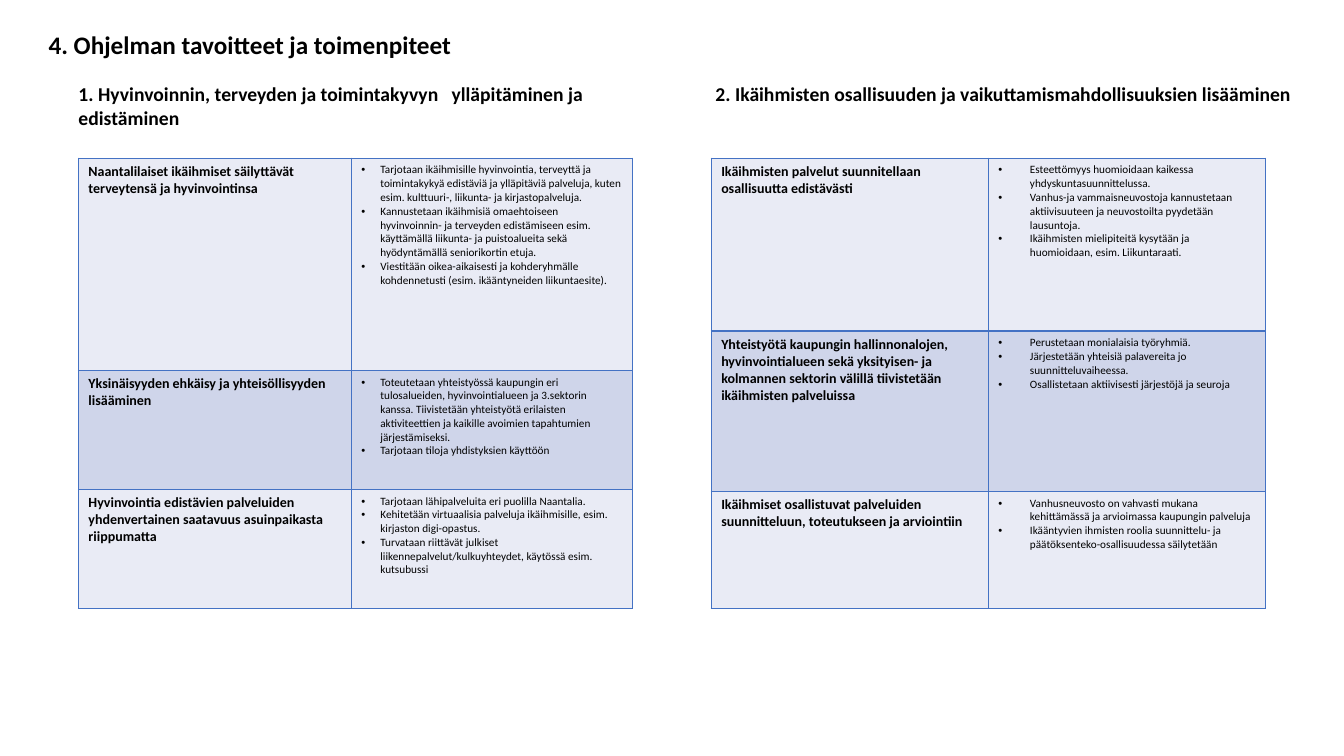
"""Builds a slide with two tables of goals and measures for older residents."""
from lxml import etree
from pptx import Presentation
from pptx.dml.color import RGBColor
from pptx.enum import text
from pptx.oxml import ns
from pptx.util import Pt

TITLE = "4. Ohjelman tavoitteet ja toimenpiteet"
SECTIONS = [
    {
        "heading": "1. Hyvinvoinnin, terveyden ja toimintakyvyn   ylläpitäminen ja edistäminen",
        "heading_left": 49, "heading_width": 446,
        "left": 56, "columns": (195, 201), "rows": (151.5, 85, 85),
        "indent": 13.5, "last_space": 0,
        "goals": [
            ("Naantalilaiset ikäihmiset säilyttävät terveytensä ja hyvinvointinsa", [
                "Tarjotaan ikäihmisille hyvinvointia, terveyttä ja toimintakykyä edistäviä ja "
                "ylläpitäviä palveluja, kuten esim. kulttuuri-, liikunta- ja kirjastopalveluja.",
                "Kannustetaan ikäihmisiä omaehtoiseen hyvinvoinnin- ja terveyden edistämiseen esim. "
                "käyttämällä liikunta- ja puistoalueita sekä hyödyntämällä seniorikortin etuja.",
                "Viestitään oikea-aikaisesti ja kohderyhmälle kohdennetusti "
                "(esim. ikääntyneiden liikuntaesite).",
            ]),
            ("Yksinäisyyden ehkäisy ja yhteisöllisyyden lisääminen", [
                "Toteutetaan yhteistyössä kaupungin eri tulosalueiden, hyvinvointialueen ja "
                "3.sektorin kanssa. Tiivistetään yhteistyötä erilaisten aktiviteettien ja kaikille "
                "avoimien tapahtumien järjestämiseksi.",
                "Tarjotaan tiloja yhdistyksien käyttöön",
            ]),
            ("Hyvinvointia edistävien palveluiden yhdenvertainen saatavuus asuinpaikasta riippumatta", [
                "Tarjotaan lähipalveluita eri puolilla Naantalia.",
                "Kehitetään virtuaalisia palveluja ikäihmisille, esim. kirjaston digi-opastus.",
                "Turvataan riittävät julkiset liikennepalvelut/kulkuyhteydet, käytössä esim. kutsubussi",
            ]),
        ],
    },
    {
        "heading": "2. Ikäihmisten osallisuuden ja vaikuttamismahdollisuuksien lisääminen",
        "heading_left": 504, "heading_width": 438,
        "left": 508, "columns": (198, 198), "rows": (123.5, 114.5, 83.5),
        "indent": 22.5, "last_space": 8,
        "goals": [
            ("Ikäihmisten palvelut suunnitellaan osallisuutta edistävästi", [
                "Esteettömyys huomioidaan kaikessa yhdyskuntasuunnittelussa.",
                "Vanhus-ja vammaisneuvostoja kannustetaan aktiivisuuteen ja neuvostoilta "
                "pyydetään lausuntoja.",
                "Ikäihmisten mielipiteitä kysytään ja huomioidaan, esim. Liikuntaraati.",
            ]),
            ("Yhteistyötä kaupungin hallinnonalojen, hyvinvointialueen sekä yksityisen- ja "
             "kolmannen sektorin välillä tiivistetään ikäihmisten palveluissa", [
                "Perustetaan monialaisia työryhmiä.",
                "Järjestetään yhteisiä palavereita jo suunnitteluvaiheessa.",
                "Osallistetaan aktiivisesti järjestöjä ja seuroja",
             ]),
            ("Ikäihmiset osallistuvat palveluiden suunnitteluun, toteutukseen ja arviointiin", [
                "Vanhusneuvosto on vahvasti mukana kehittämässä ja arvioimassa kaupungin palveluja",
                "Ikääntyvien ihmisten roolia suunnittelu- ja päätöksenteko-osallisuudessa säilytetään",
            ]),
        ],
    },
]
FONT = "Calibri"
BLACK = RGBColor(0x00, 0x00, 0x00)
BORDER = RGBColor(0x44, 0x72, 0xC4)
BANDS = (RGBColor(0xE9, 0xEB, 0xF5), RGBColor(0xCF, 0xD5, 0xEA))
HEADING_TOP, HEADING_HEIGHT, TABLE_TOP = 55, 58, 113


def style(para, size, bold):
    for span in para.runs:
        span.font.name = FONT
        span.font.size = Pt(size)
        span.font.bold = bold
        span.font.color.rgb = BLACK


def add_bullet(para, indent):
    props = para._p.get_or_add_pPr()
    props.set("marL", str(Pt(indent)))
    props.set("indent", str(-Pt(indent)))
    etree.SubElement(props, ns.qn("a:buFont"), typeface="Arial")
    etree.SubElement(props, ns.qn("a:buChar"), char="•")


def format_cell(cell, color):
    props = cell._tc.get_or_add_tcPr()
    for side in ("lnL", "lnR", "lnT", "lnB"):
        line = etree.SubElement(props, ns.qn(f"a:{side}"), w=str(Pt(1)))
        fill = etree.SubElement(line, ns.qn("a:solidFill"))
        etree.SubElement(fill, ns.qn("a:srgbClr"), val=str(BORDER))
    cell.fill.solid()
    cell.fill.fore_color.rgb = color


def add_heading(page, section):
    box = page.shapes.add_textbox(Pt(section["heading_left"]), Pt(HEADING_TOP),
                                  Pt(section["heading_width"]), Pt(HEADING_HEIGHT))
    box.text_frame.word_wrap = True
    box.text_frame.text = section["heading"]
    style(box.text_frame.paragraphs[0], 14, True)


def add_goal_table(page, section):
    columns, rows = section["columns"], section["rows"]
    table = page.shapes.add_table(len(rows), len(columns), Pt(section["left"]), Pt(TABLE_TOP),
                                  Pt(sum(columns)), Pt(sum(rows))).table
    table.first_row = False
    table.horz_banding = False
    for column, width in zip(table.columns, columns):
        column.width = Pt(width)
    for index, (goal, measures) in enumerate(section["goals"]):
        table.rows[index].height = Pt(rows[index])
        goal_cell, measure_cell = table.cell(index, 0), table.cell(index, 1)
        for cell in (goal_cell, measure_cell):
            format_cell(cell, BANDS[index % 2])
        goal_cell.text_frame.text = goal
        style(goal_cell.text_frame.paragraphs[0], 10, True)
        measure_cell.text_frame.text = "\n".join(measures)
        for para in measure_cell.text_frame.paragraphs:
            add_bullet(para, section["indent"])
            style(para, 8, False)
    if section["last_space"]:
        para.space_after = Pt(section["last_space"])


def main():
    deck = Presentation()
    deck.slide_width, deck.slide_height = Pt(960), Pt(540)
    page = deck.slides.add_slide(deck.slide_layouts[5])
    title = page.shapes.title
    title.left, title.top, title.width, title.height = Pt(27.5), Pt(17.5), Pt(863), Pt(29)
    frame = title.text_frame
    frame.text = TITLE
    frame.word_wrap = True
    frame.auto_size = text.MSO_AUTO_SIZE.NONE
    frame.vertical_anchor = text.MSO_ANCHOR.TOP
    frame.paragraphs[0].alignment = text.PP_ALIGN.LEFT
    style(frame.paragraphs[0], 18, True)
    for section in SECTIONS:
        add_heading(page, section)
        add_goal_table(page, section)
    deck.save("out.pptx")


if __name__ == "__main__":
    main()
